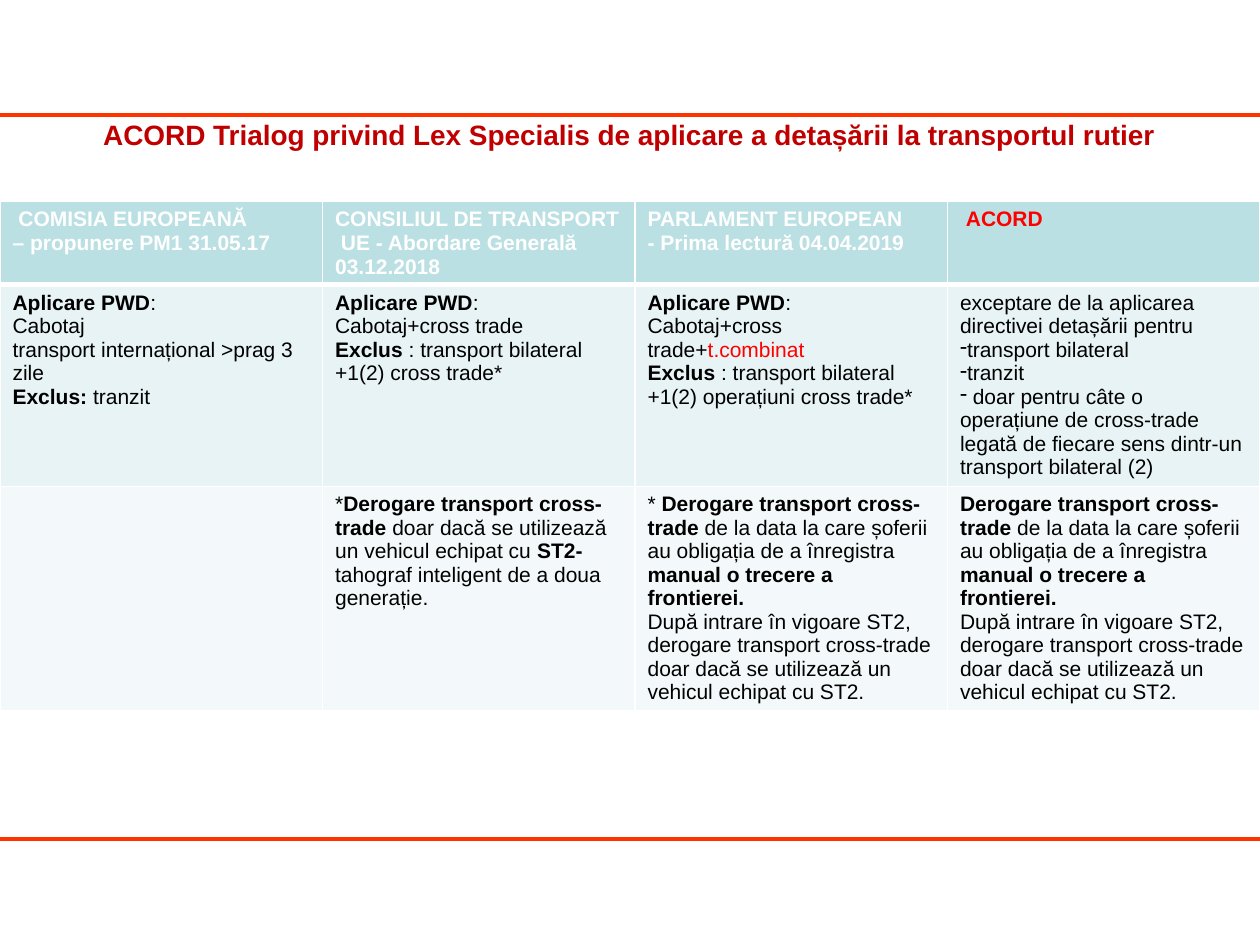
from lxml import etree
from pptx import Presentation
from pptx.dml.color import RGBColor
from pptx.enum.shapes import MSO_CONNECTOR
from pptx.enum.text import MSO_ANCHOR, PP_ALIGN
from pptx.oxml import parse_xml
from pptx.oxml.ns import nsdecls, qn
from pptx.util import Inches, Pt

STRAIGHT = MSO_CONNECTOR.STRAIGHT
MIDDLE = MSO_ANCHOR.MIDDLE
CENTER = PP_ALIGN.CENTER
TITLE_ONLY = 5

RULE, WHITE, BLACK, RED, DARK = "FF3300", "FFFFFF", "000000", "FF0000", "C00000"
FILLS = ["BBE0E3", "E7F3F4", "F3F9FA"]
COLS = [2.56, 2.48, 2.48, 2.48]
ROWS = [0.65, 1.6, 1.78]
PLAIN = {"bold": False, "color": BLACK}
BOLD = {"bold": True, "color": BLACK}
HOT = {"bold": False, "color": RED}
HEAD = {"bold": True, "color": WHITE}
ACCENT = {"bold": True, "color": RED}


def rgb(code):
    return RGBColor.from_string(code)


def border(tag, width):
    return parse_xml(
        f'<a:{tag} {nsdecls("a")} w="{Pt(width)}"><a:solidFill>'
        f'<a:srgbClr val="{WHITE}"/></a:solidFill></a:{tag}>')


class Deck:
    def __init__(self, font):
        self.font = font
        self.prs = Presentation()
        self.prs.slide_width, self.prs.slide_height = Inches(10), Inches(7.5)
        self.slide = self.prs.slides.add_slide(self.prs.slide_layouts[TITLE_ONLY])

    def run(self, para, text, size, bold, color):
        run = para.add_run()
        run.text = text
        for name, value in {"name": self.font, "size": Pt(size), "bold": bold}.items():
            setattr(run.font, name, value)
        run.font.color.rgb = rgb(color)

    def rule(self, top):
        line = self.slide.shapes.add_connector(
            STRAIGHT, 0, Inches(top), Inches(10), Inches(top))
        line.line.color.rgb = rgb(RULE)
        line.line.width = Pt(2.25)
        etree.SubElement(line._element.spPr, qn("a:effectLst"))

    def title(self, text, **box):
        shape = self.slide.shapes.title
        for name, value in box.items():
            setattr(shape, name, Inches(value))
        frame = shape.text_frame
        frame.word_wrap, frame.vertical_anchor = True, MIDDLE
        para = frame.paragraphs[0]
        para.alignment = CENTER
        self.run(para, text, 16, True, DARK)

    def cell(self, cell, paras, fill, base):
        """Fill a cell; a paragraph starting with DASH gets a dash bullet."""
        cell.fill.solid()
        cell.fill.fore_color.rgb = rgb(fill)
        bottom = 3 if base is HEAD else 1
        widths = {"lnL": 1, "lnR": 1, "lnT": 1, "lnB": bottom}
        for i, (tag, width) in enumerate(widths.items()):
            cell._tc.get_or_add_tcPr().insert(i, border(tag, width))
        frame = cell.text_frame
        for i, runs in enumerate(paras):
            para = frame.add_paragraph() if i else frame.paragraphs[0]
            if runs[0] is DASH:
                props = para._p.get_or_add_pPr()
                props.set("marL", "0")
                props.set("indent", "0")
                etree.SubElement(props, qn("a:buChar")).set("char", "-")
                runs = runs[1:]
            for item in runs:
                text, style = (item, base) if isinstance(item, str) else item
                self.run(para, text, 12, **style)

    def table(self, rows, left, top):
        grid = self.slide.shapes.add_table(
            len(ROWS), len(COLS), Inches(left), Inches(top),
            Inches(sum(COLS)), Inches(sum(ROWS))).table
        for col, width in zip(grid.columns, COLS):
            col.width = Inches(width)
        for r, (row, height) in enumerate(zip(rows, ROWS)):
            grid.rows[r].height = Inches(height)
            for c, paras in enumerate(row):
                self.cell(grid.cell(r, c), paras, FILLS[r], PLAIN if r else HEAD)


DASH = object()
APPLY = [("Aplicare PWD", BOLD), ":"]
WAIVER = ("Derogare transport cross-trade", BOLD)
MANUAL = [WAIVER, " de la data la care șoferii au obligația de a înregistra ",
          ("manual o trecere a frontierei.", BOLD)]
AFTER = ["După intrare în vigoare ST2, derogare transport cross-trade doar dacă "
         "se utilizează un vehicul echipat cu ST2."]

HEADS = [
    [[" COMISIA EUROPEANĂ"], ["– propunere PM1 31.05.17"]],
    [["CONSILIUL DE TRANSPORT"], [" UE - Abordare Generală 03.12.2018"]],
    [["PARLAMENT EUROPEAN"], ["- Prima lectură 04.04.2019"]],
    [[" ", ("ACORD", ACCENT)]],
]
SCOPE = [
    [APPLY, ["Cabotaj"], ["transport internațional >prag 3 zile"],
     [("Exclus: ", BOLD), "tranzit"]],
    [APPLY, ["Cabotaj+cross trade"],
     [("Exclus", BOLD), " : transport bilateral +1(2) cross trade*"]],
    [APPLY, ["Cabotaj+cross trade+", ("t.combinat", HOT)],
     [("Exclus", BOLD), " : transport bilateral +1(2) operațiuni cross trade*"]],
    [["exceptare de la aplicarea directivei detașării pentru"],
     [DASH, "transport bilateral"],
     [DASH, "tranzit"],
     [DASH, " doar pentru câte o operațiune de cross-trade legată de fiecare "
            "sens dintr-un transport bilateral (2)"]],
]
WAIVERS = [
    [],
    [["*", WAIVER, " doar dacă se utilizează un vehicul echipat cu",
      (" ST2-", BOLD), " tahograf inteligent de a doua generație."]],
    [["* ", *MANUAL], AFTER],
    [MANUAL, AFTER],
]


def main():
    deck = Deck("Arial")
    for top in (0.91, 6.66):
        deck.rule(top)
    deck.table([HEADS, SCOPE, WAIVERS], 0, 1.6)
    deck.title("ACORD Trialog privind Lex Specialis de aplicare a detașării "
               "la transportul rutier", left=0.15, top=0.8, width=9.69, height=0.54)
    deck.prs.save("out.pptx")


if __name__ == "__main__":
    main()
